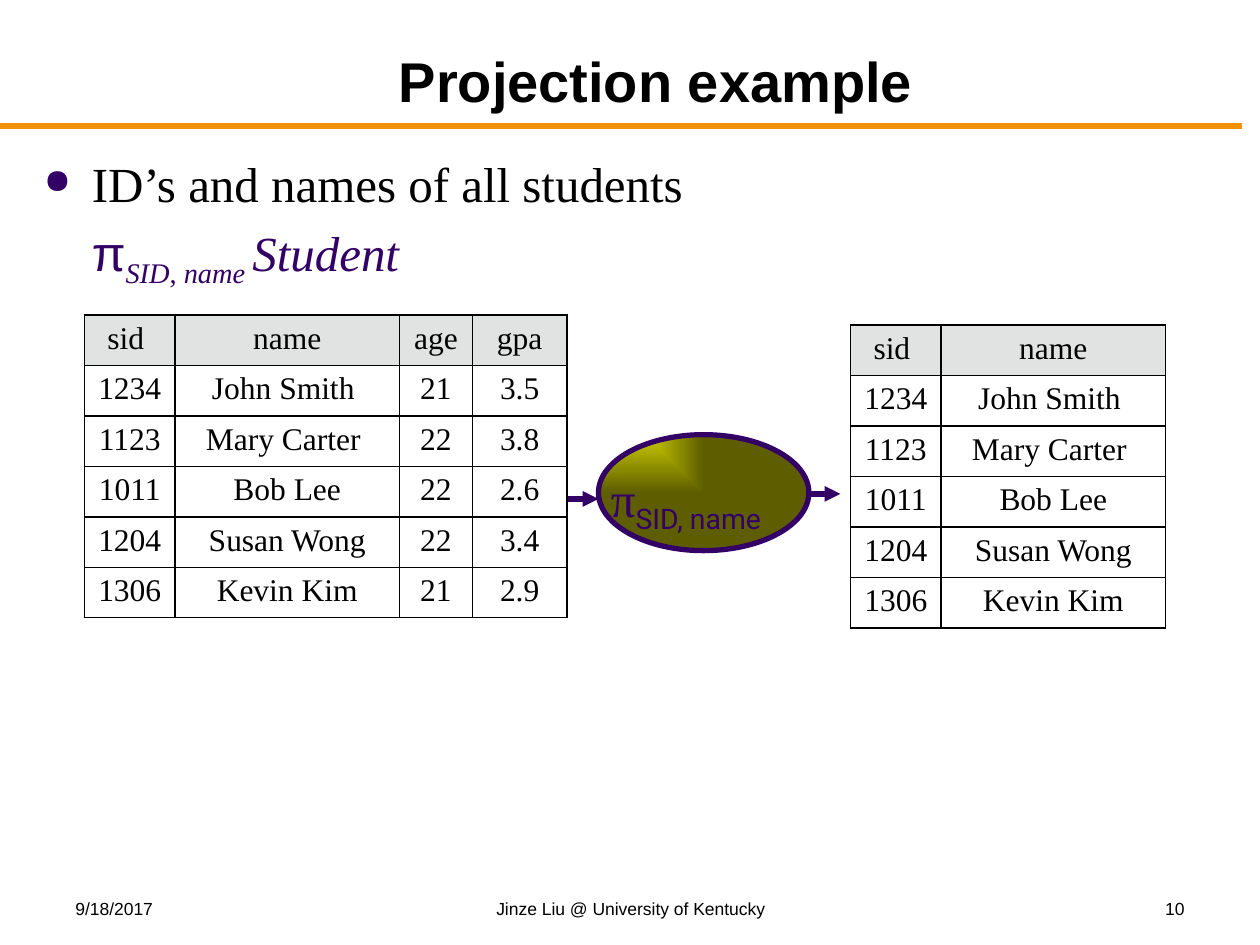
from lxml.etree import SubElement
from pptx import Presentation
from pptx.dml.color import RGBColor
from pptx.enum.shapes import MSO_CONNECTOR as Connector, MSO_SHAPE as Shape
from pptx.enum.text import MSO_ANCHOR as Anchor, PP_ALIGN as Align
from pptx.oxml import parse_xml
from pptx.oxml.ns import nsdecls, qn
from pptx.util import Inches, Pt

COLORS = {
    "black": "000000", "purple": "330066", "orange": "EF9100",
    "header": "E1E3E3", "yellow": "CCCC00", "olive": "5E5E00",
}
SERIF = "Times New Roman"

STUDENTS = [
    ("sid ", "name", "age", "gpa"),
    ("1234", "John Smith ", "21", "3.5"),
    ("1123", "Mary Carter ", "22", "3.8"),
    ("1011", "Bob Lee", "22", "2.6"),
    ("1204", "Susan Wong", "22", "3.4"),
    ("1306", "Kevin Kim", "21", "2.9"),
]
COLUMN_WIDTHS = [0.72, 1.78, 0.58, 0.75]
ROW_HEIGHT = 0.4
TABLES = [(0.67, 2.5, 4), (6.75, 2.58, 2)]
ARROWS = [(4.5, 4.75, 3.96), (6.42, 6.67, 3.92)]
FOOTERS = [
    ("9/18/2017", 0.5, 2.33, Align.LEFT),
    ("Jinze Liu @ University of Kentucky", 3.42, 3.17, Align.CENTER),
    ("10", 7.17, 2.33, Align.RIGHT),
]
EXPRESSION = [
    ("π", {"font": "Arial"}),
    ("SID", {"italic": True, "baseline": -25}),
    (", ", {"baseline": -25}),
    ("name ", {"italic": True, "baseline": -25}),
    ("Student", {"italic": True}),
]


def rgb(name):
    return RGBColor.from_string(COLORS[name])


def add_text(para, text, size=28, font=SERIF, color="black", bold=False,
             italic=False, baseline=0, align=None):
    span = para.add_run()
    span.text = text
    span.font.size = Pt(size)
    span.font.name = font
    span.font.bold = bold
    span.font.italic = italic
    span.font.color.rgb = rgb(color)
    if baseline:
        span._r.get_or_add_rPr().set("baseline", str(baseline * 1000))
    if align is not None:
        para.alignment = align


def add_box(slide, left, top, width, height, wrap=True, anchor=Anchor.TOP):
    box = slide.shapes.add_textbox(
        Inches(left), Inches(top), Inches(width), Inches(height))
    box.text_frame.word_wrap = wrap
    box.text_frame.vertical_anchor = anchor
    return box.text_frame


def add_line(slide, x1, x2, y, color, arrow=False):
    line = slide.shapes.add_connector(
        Connector.STRAIGHT, Inches(x1), Inches(y), Inches(x2), Inches(y))
    line.line.color.rgb = rgb(color)
    line.line.width = Pt(3)
    if arrow:
        SubElement(line.line._get_or_add_ln(), qn("a:tailEnd"), type="triangle")
    SubElement(line._element.spPr, qn("a:effectLst"))


def add_borders(cell):
    properties = cell._tc.get_or_add_tcPr()
    for index, side in enumerate(("lnL", "lnR", "lnT", "lnB")):
        properties.insert(index, parse_xml(
            f'<a:{side} {nsdecls("a")} w="12700"><a:solidFill>'
            f'<a:srgbClr val="{COLORS["black"]}"/></a:solidFill></a:{side}>'))


def add_students(slide, left, top, column_count):
    widths = COLUMN_WIDTHS[:column_count]
    table = slide.shapes.add_table(
        len(STUDENTS), column_count, Inches(left), Inches(top),
        Inches(sum(widths)), Inches(ROW_HEIGHT * len(STUDENTS))).table
    table.first_row = False
    table.horz_banding = False
    for column, width in zip(table.columns, widths):
        column.width = Inches(width)
    for row_index, values in enumerate(STUDENTS):
        table.rows[row_index].height = Inches(ROW_HEIGHT)
        for column_index, value in enumerate(values[:column_count]):
            cell = table.cell(row_index, column_index)
            if row_index == 0:
                cell.fill.solid()
                cell.fill.fore_color.rgb = rgb("header")
            else:
                cell.fill.background()
            add_borders(cell)
            add_text(cell.text_frame.paragraphs[0], value, size=18,
                     align=Align.CENTER)


def add_body(slide):
    frame = add_box(slide, 0.25, 1.17, 9.42, 5.75)
    heading, formula = frame.paragraphs[0], frame.add_paragraph()
    for para, indent in ((heading, -0.38), (formula, 0)):
        para.space_before = Pt(5.6)
        properties = para._p.get_or_add_pPr()
        properties.set("marL", str(Inches(0.38)))
        properties.set("indent", str(Inches(indent)))
    bullet = heading._p.get_or_add_pPr()
    bullet_color = SubElement(bullet, qn("a:buClr"))
    SubElement(bullet_color, qn("a:srgbClr"), val=COLORS["purple"])
    SubElement(bullet, qn("a:buSzPct"), val="70000")
    SubElement(bullet, qn("a:buChar"), char="●")
    add_text(heading, "ID’s and names of all students")
    for text, style in EXPRESSION:
        add_text(formula, text, color="purple", **style)


def add_operator(slide):
    ellipse = slide.shapes.add_shape(
        Shape.OVAL, Inches(4.75), Inches(3.45), Inches(1.67), Inches(0.92))
    ellipse.shadow.inherit = False
    ellipse.line.color.rgb = rgb("purple")
    ellipse.line.width = Pt(3)
    ellipse._element.spPr.insert(2, parse_xml(
        f'<a:gradFill {nsdecls("a")} rotWithShape="0"><a:gsLst>'
        f'<a:gs pos="0"><a:srgbClr val="{COLORS["yellow"]}"/></a:gs>'
        f'<a:gs pos="100000"><a:srgbClr val="{COLORS["olive"]}"/></a:gs>'
        '</a:gsLst><a:path path="rect">'
        '<a:fillToRect r="100000" b="100000"/></a:path></a:gradFill>'))
    label = add_box(slide, 4.75, 3.67, 1.52, 0.57, wrap=False).paragraphs[0]
    add_text(label, "π", color="purple")
    add_text(label, "SID, name", font="Roboto", color="purple", baseline=-25)


def main():
    deck = Presentation()
    deck.slide_width, deck.slide_height = Inches(10), Inches(7.5)
    slide = deck.slides.add_slide(deck.slide_layouts[6])

    add_line(slide, 0, 9.86, 1, "orange")
    for text, left, width, align in FOOTERS:
        frame = add_box(slide, left, 7.08, width, 0.25)
        add_text(frame.paragraphs[0], text, size=10, font="Arial", align=align)
    title = add_box(slide, 1.08, 0.25, 8.25, 0.7, anchor=Anchor.BOTTOM)
    add_text(title.paragraphs[0], "Projection example", size=32, font="Arial",
             bold=True, align=Align.CENTER)
    add_body(slide)
    add_operator(slide)
    for x1, x2, y in ARROWS:
        add_line(slide, x1, x2, y, "purple", arrow=True)
    for left, top, column_count in TABLES:
        add_students(slide, left, top, column_count)

    deck.save("out.pptx")


if __name__ == "__main__":
    main()
